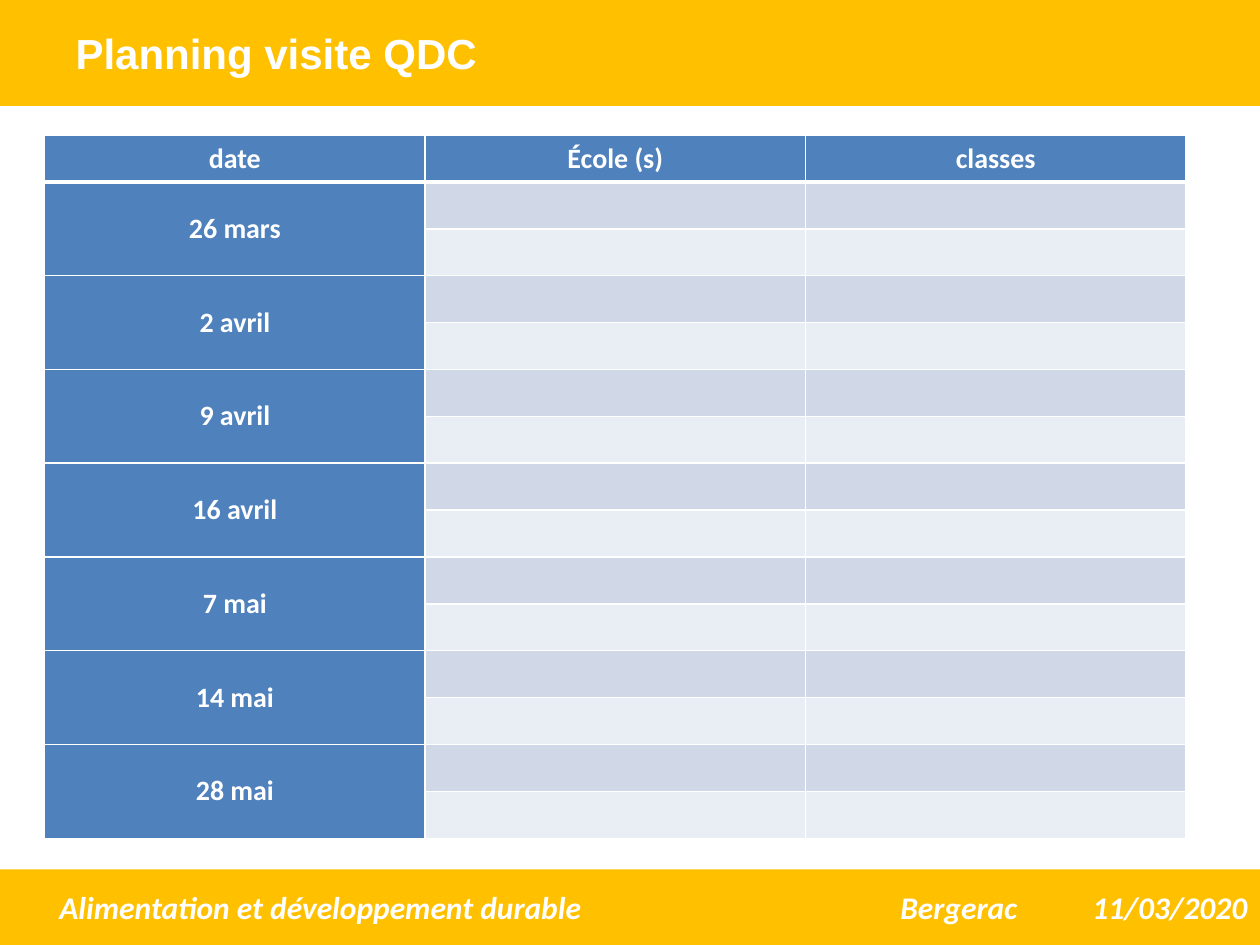
from lxml import etree
from pptx import Presentation
from pptx.dml.color import RGBColor
from pptx.enum import shapes, text
from pptx.oxml import ns
from pptx.util import Pt

COLORS = {
    "band": "FFC000",
    "heading": "4F81BD",
    "odd": "D0D8E8",
    "even": "E9EDF4",
    "white": "FFFFFF",
}
HEADINGS = ["date", "École (s)", "classes"]
DATES = ["26 mars", "2 avril", "9 avril", "16 avril", "7 mai", "14 mai", "28 mai"]
ROWS_PER_DATE = 2


def rgb(name):
    return RGBColor.from_string(COLORS[name])


def style(paragraph, size, font="Calibri", italic=False):
    paragraph.font.size = Pt(size)
    paragraph.font.name = font
    paragraph.font.bold = True
    paragraph.font.italic = italic
    paragraph.font.color.rgb = rgb("white")


def add_band(slide, left, top, width, height, wording, align):
    band = slide.shapes.add_shape(
        shapes.MSO_SHAPE.RECTANGLE, Pt(left), Pt(top), Pt(width), Pt(height))
    band.shadow.inherit = False
    band.fill.solid()
    band.fill.fore_color.rgb = rgb("band")
    band.line.fill.background()
    band.text_frame.vertical_anchor = text.MSO_ANCHOR.MIDDLE
    paragraph = band.text_frame.paragraphs[0]
    paragraph.text = wording
    paragraph.alignment = align
    return band


def add_header(slide, left, top, width, height):
    band = add_band(slide, left, top, width, height,
                    "Planning visite QDC", text.PP_ALIGN.LEFT)
    band.text_frame.margin_left = Pt(43.2)
    style(band.text_frame.paragraphs[0], 24, "Arial")


def add_footer(slide, left, top, width, height):
    band = add_band(slide, left, top, width, height,
                    "11/03/2020", text.PP_ALIGN.RIGHT)
    style(band.text_frame.paragraphs[0], 18, italic=True)

    subject = slide.shapes.add_textbox(
        Pt(left + 16), Pt(top + 7.2), Pt(587.5), Pt(28.8))
    frame = subject.text_frame
    frame.word_wrap = True
    frame.margin_left = Pt(18)
    frame.vertical_anchor = text.MSO_ANCHOR.MIDDLE
    paragraph = frame.paragraphs[0]
    paragraph.text = "Alimentation et développement durable\tBergerac"
    tabs = etree.SubElement(paragraph._p.get_or_add_pPr(), ns.qn("a:tabLst"))
    etree.SubElement(tabs, ns.qn("a:tab"), pos=str(Pt(480.5)), algn="l")
    style(paragraph, 18, italic=True)


def set_borders(cell, widths):
    properties = cell._tc.get_or_add_tcPr()
    for index, (side, width) in enumerate(widths.items()):
        line = etree.Element(ns.qn(f"a:ln{side}"), w=str(Pt(width)))
        fill = etree.SubElement(line, ns.qn("a:solidFill"))
        etree.SubElement(fill, ns.qn("a:srgbClr"), val=COLORS["white"])
        properties.insert(index, line)


def fill_cell(cell, wording, color, top=1, bottom=1):
    cell.fill.solid()
    cell.fill.fore_color.rgb = rgb(color)
    cell.margin_left = cell.margin_right = Pt(5)
    cell.margin_top = cell.margin_bottom = 0
    cell.vertical_anchor = text.MSO_ANCHOR.MIDDLE
    paragraph = cell.text_frame.paragraphs[0]
    paragraph.text = wording
    paragraph.alignment = text.PP_ALIGN.CENTER
    style(paragraph, 16)
    set_borders(cell, {"L": 1, "R": 1, "T": top, "B": bottom})


def add_planning(slide, left, top, width, height):
    row_count = 1 + ROWS_PER_DATE * len(DATES)
    planning = slide.shapes.add_table(
        row_count, len(HEADINGS), Pt(left), Pt(top), Pt(width), Pt(height)).table
    planning.horz_banding = False
    for column in planning.columns:
        column.width = Pt(width / len(HEADINGS))
    for row in planning.rows:
        row.height = Pt(height / row_count)

    for column, heading in enumerate(HEADINGS):
        fill_cell(planning.cell(0, column), heading, "heading", bottom=3)
    for row in range(1, row_count):
        date_index, offset = divmod(row - 1, ROWS_PER_DATE)
        border = 3 if row == 1 else 1
        date = DATES[date_index] if offset == 0 else ""
        fill_cell(planning.cell(row, 0), date, "heading", top=border)
        for column in range(1, len(HEADINGS)):
            fill_cell(planning.cell(row, column), "",
                      "even" if offset else "odd", top=border)
        if offset == 0:
            planning.cell(row, 0).merge(planning.cell(row + ROWS_PER_DATE - 1, 0))


def main():
    deck = Presentation()
    deck.slide_width, deck.slide_height = Pt(720), Pt(540)
    slide = deck.slides.add_slide(deck.slide_layouts[6])
    add_header(slide, 0, 0, 720, 60.5)
    add_footer(slide, 0, 496.8, 720, 43.2)
    add_planning(slide, 25.5, 77.2, 652.2, 402)
    deck.save("out.pptx")


if __name__ == "__main__":
    main()
